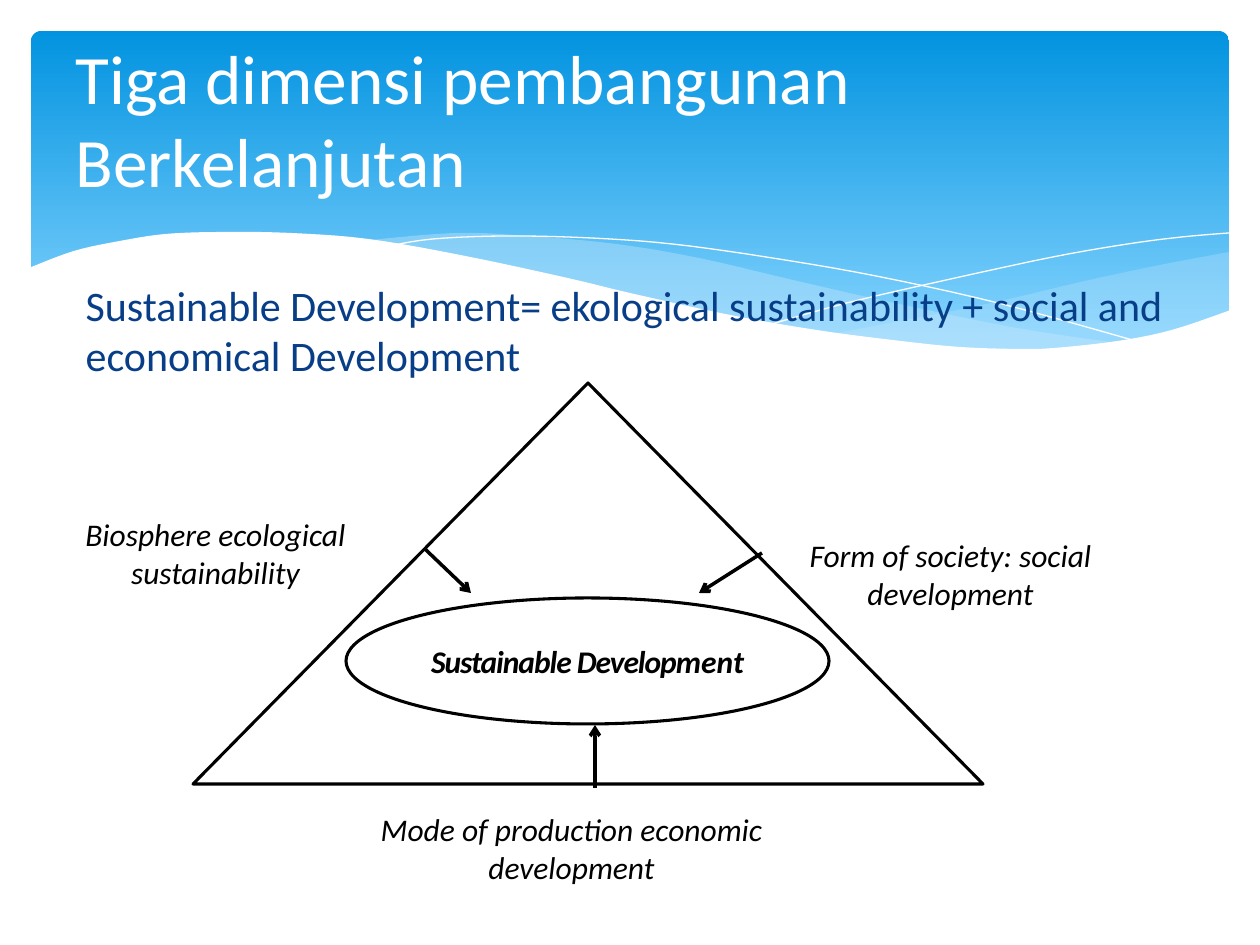
"""Builds the slide on the three dimensions of sustainable development."""
import dataclasses
import itertools

import lxml.etree
import pptx
import pptx.dml.color
import pptx.enum.dml
import pptx.enum.shapes
import pptx.enum.text
import pptx.oxml.ns
import pptx.util

RGBColor = pptx.dml.color.RGBColor
WHITE = RGBColor(0xFF, 0xFF, 0xFF)
BLACK = RGBColor(0, 0, 0)
NAVY = RGBColor(0x07, 0x3E, 0x87)
BANNER_TOP = RGBColor(0x02, 0x93, 0xE0)
BANNER_BOTTOM = RGBColor(0x83, 0xD3, 0xFE)
PALE_BLUE = RGBColor(0xC6, 0xE7, 0xFC)
FONT = "Calibri"
EMU_PER_PX = 914400 / 126
CURVE_STEPS = 5
SHAPE = pptx.enum.shapes.MSO_SHAPE
ALIGN = pptx.enum.text.PP_ALIGN
AUTO_SIZE = pptx.enum.text.MSO_AUTO_SIZE

Point = tuple[float, float]


@dataclasses.dataclass(frozen=True)
class Wave:
    """A banner outline made of smooth edges, filled or drawn as a thin line."""
    edges: list[list[Point]]
    fill: RGBColor | None = None
    opacity: int = 100


@dataclasses.dataclass(frozen=True)
class Label:
    """A dimension named beside the triangle."""
    text: str
    left: int
    top: int
    width: int
    height: int = 89


@dataclasses.dataclass(frozen=True)
class Arrow:
    """A pointer from a side of the triangle to its centre."""
    start: Point
    end: Point


WAVES = [
    Wave([[(1229, 252), (1160, 265), (1085, 281), (982, 305), (833, 334)],
          [(833, 334), (906, 343), (969, 349), (1026, 350), (1087, 347),
           (1150, 336), (1196, 324), (1229, 311)]], PALE_BLUE, 29),
    Wave([[(1125, 344), (1017, 328), (890, 302), (793, 280), (699, 258),
           (616, 244), (529, 236), (455, 233), (360, 241)],
          [(360, 241), (431, 251), (509, 266), (566, 280), (668, 302), (779, 325),
           (876, 340), (959, 349), (1031, 350), (1080, 349), (1125, 344)]], PALE_BLUE, 40),
    Wave([[(389, 246), (433, 239), (505, 236), (591, 238), (672, 244),
           (766, 257), (876, 276), (1002, 304), (1143, 343)]]),
    Wave([[(772, 324), (847, 303), (942, 281), (1053, 257), (1128, 244),
           (1182, 237), (1229, 233)]]),
    Wave([[(1231, 310), (1172, 330), (1118, 341), (1055, 348), (1019, 349), (959, 347),
           (892, 340), (816, 330), (730, 315), (634, 294), (563, 277), (460, 255),
           (368, 239), (290, 233), (223, 232), (166, 234), (120, 241), (74, 251), (29, 268)],
          [(29, 415), (1231, 415)]], WHITE),
]
ARROWS = [
    Arrow((425, 549), (471, 593)),
    Arrow((595, 788), (595, 725)),
    Arrow((762, 553), (699, 593)),
]
LABELS = [
    Label("Biosphere ecological sustainability", 53, 509, 325),
    Label("Form of society: social development", 788, 530, 325),
    Label("Mode of production economic development", 346, 804, 451),
]


def emu(px: float) -> pptx.util.Emu:
    """Turn px into EMU."""
    return pptx.util.Emu(round(px * EMU_PER_PX))


def smooth(knots: list[Point]) -> list[Point]:
    """Sample a Catmull-Rom curve through the knots."""
    padded = [knots[0], *knots, knots[-1]]
    curve = [knots[0]]
    for a, b, c, d in zip(padded, padded[1:], padded[2:], padded[3:]):
        for step in range(1, CURVE_STEPS + 1):
            t = step / CURVE_STEPS
            curve.append(tuple(
                b[i] + (c[i] - a[i]) * t / 2
                + (2 * a[i] - 5 * b[i] + 4 * c[i] - d[i]) * t ** 2 / 2
                + (3 * b[i] - a[i] - 3 * c[i] + d[i]) * t ** 3 / 2
                for i in (0, 1)))
    return curve


def add_run(paragraph, text: str, size: float, color: RGBColor,
            bold: bool = False, italic: bool = False):
    """Add one formatted run."""
    run = paragraph.add_run()
    run.text = text
    run.font.name = FONT
    run.font.size = pptx.util.Pt(size)
    run.font.color.rgb = color
    run.font.bold = bold
    run.font.italic = italic
    return run


def add_child(parent, tag: str, **attributes: str) -> None:
    """Append a drawing element to its parent."""
    lxml.etree.SubElement(parent, pptx.oxml.ns.qn(tag), attributes)


def add_banner(slide) -> None:
    """Draw the gradient banner."""
    banner = slide.shapes.add_shape(SHAPE.ROUNDED_RECTANGLE, *map(emu, (31, 31, 1198, 340)))
    banner.adjustments[0] = 0.03
    banner.shadow.inherit = False
    banner.line.fill.background()
    banner.fill.gradient()
    banner.fill.gradient_angle = 270
    stops = zip(banner.fill.gradient_stops, (0, 0.9), (BANNER_TOP, BANNER_BOTTOM))
    for stop, position, color in stops:
        stop.position = position
        stop.color.rgb = color


def add_wave(slide, wave: Wave) -> None:
    """Draw one wave of the banner."""
    points = itertools.chain.from_iterable(map(smooth, wave.edges))
    first, *rest = [(emu(x), emu(y)) for x, y in points]
    builder = slide.shapes.build_freeform(*first)
    builder.add_line_segments(rest, close=wave.fill is not None)
    outline = builder.convert_to_shape()
    outline.shadow.inherit = False
    if wave.fill is None:
        outline.fill.background()
        outline.line.color.rgb = WHITE
        outline.line.width = 0
        return
    outline.line.fill.background()
    outline.fill.solid()
    outline.fill.fore_color.rgb = wave.fill
    if wave.opacity < 100:
        color = outline.element.spPr.find(".//" + pptx.oxml.ns.qn("a:srgbClr"))
        add_child(color, "a:alpha", val=str(wave.opacity * 1000))


def fill_placeholder(holder, text: str, box: tuple[int, ...], size: float, color: RGBColor):
    """Place a placeholder in front and write its text; return its paragraph."""
    holder.left, holder.top, holder.width, holder.height = map(emu, box)
    holder.element.getparent().append(holder.element)
    holder.text_frame.auto_size = AUTO_SIZE.NONE
    paragraph = holder.text_frame.paragraphs[0]
    paragraph.alignment = ALIGN.LEFT
    add_run(paragraph, text, size, color)
    return paragraph


def add_outlined(slide, preset, box: tuple[int, ...]):
    """Draw an unfilled shape with a black outline."""
    figure = slide.shapes.add_shape(preset, *map(emu, box))
    figure.shadow.inherit = False
    figure.fill.background()
    figure.line.color.rgb = BLACK
    figure.line.width = pptx.util.Pt(1.75)
    return figure


def add_arrow(slide, arrow: Arrow) -> None:
    """Draw an arrow toward the centre."""
    pointer = slide.shapes.add_connector(
        pptx.enum.shapes.MSO_CONNECTOR.STRAIGHT, *map(emu, arrow.start + arrow.end))
    pointer.line.color.rgb = BLACK
    pointer.line.width = pptx.util.Pt(2)
    add_child(pointer.line._get_or_add_ln(), "a:tailEnd", type="arrow")
    add_child(pointer.element.spPr, "a:effectLst")


def add_label(slide, label: Label) -> None:
    """Write a dimension beside the triangle."""
    box = slide.shapes.add_textbox(*map(emu, (label.left, label.top, label.width, label.height)))
    box.text_frame.word_wrap = True
    box.text_frame.auto_size = AUTO_SIZE.SHAPE_TO_FIT_TEXT
    paragraph = box.text_frame.paragraphs[0]
    paragraph.alignment = ALIGN.CENTER
    add_run(paragraph, label.text, 18, BLACK, italic=True)


def main() -> None:
    """Build and save the slide."""
    deck = pptx.Presentation()
    deck.slide_width, deck.slide_height = emu(1260), emu(945)
    slide = deck.slides.add_slide(deck.slide_layouts[1])
    add_banner(slide)
    for wave in WAVES:
        add_wave(slide, wave)
    definition = fill_placeholder(
        slide.placeholders[1],
        "Sustainable Development= ekological sustainability + social and economical Development",
        (73, 273, 1197, 116), 24, NAVY)
    properties = definition._p.get_or_add_pPr()
    properties.set("marL", "0")
    properties.set("indent", "0")
    add_child(properties, "a:buNone")
    fill_placeholder(slide.shapes.title, "Tiga dimensi pembangunan Berkelanjutan",
                     (63, 47, 1134, 142), 39.6, WHITE)
    triangle = add_outlined(slide, SHAPE.ISOSCELES_TRIANGLE, (193, 383, 790, 401))
    triangle.fill.solid()
    triangle.fill.fore_color.rgb = WHITE
    core = add_outlined(slide, SHAPE.OVAL, (346, 598, 483, 126))
    goal = core.text_frame.paragraphs[0]
    goal.alignment = ALIGN.CENTER
    tight = add_run(goal, "Sustainable Developm", 18, BLACK, bold=True, italic=True)
    tight.font._element.set("spc", "-60")
    add_run(goal, "ent", 18, BLACK, bold=True, italic=True)
    for arrow in ARROWS:
        add_arrow(slide, arrow)
    for label in LABELS:
        add_label(slide, label)
    deck.save("out.pptx")


if __name__ == "__main__":
    main()
